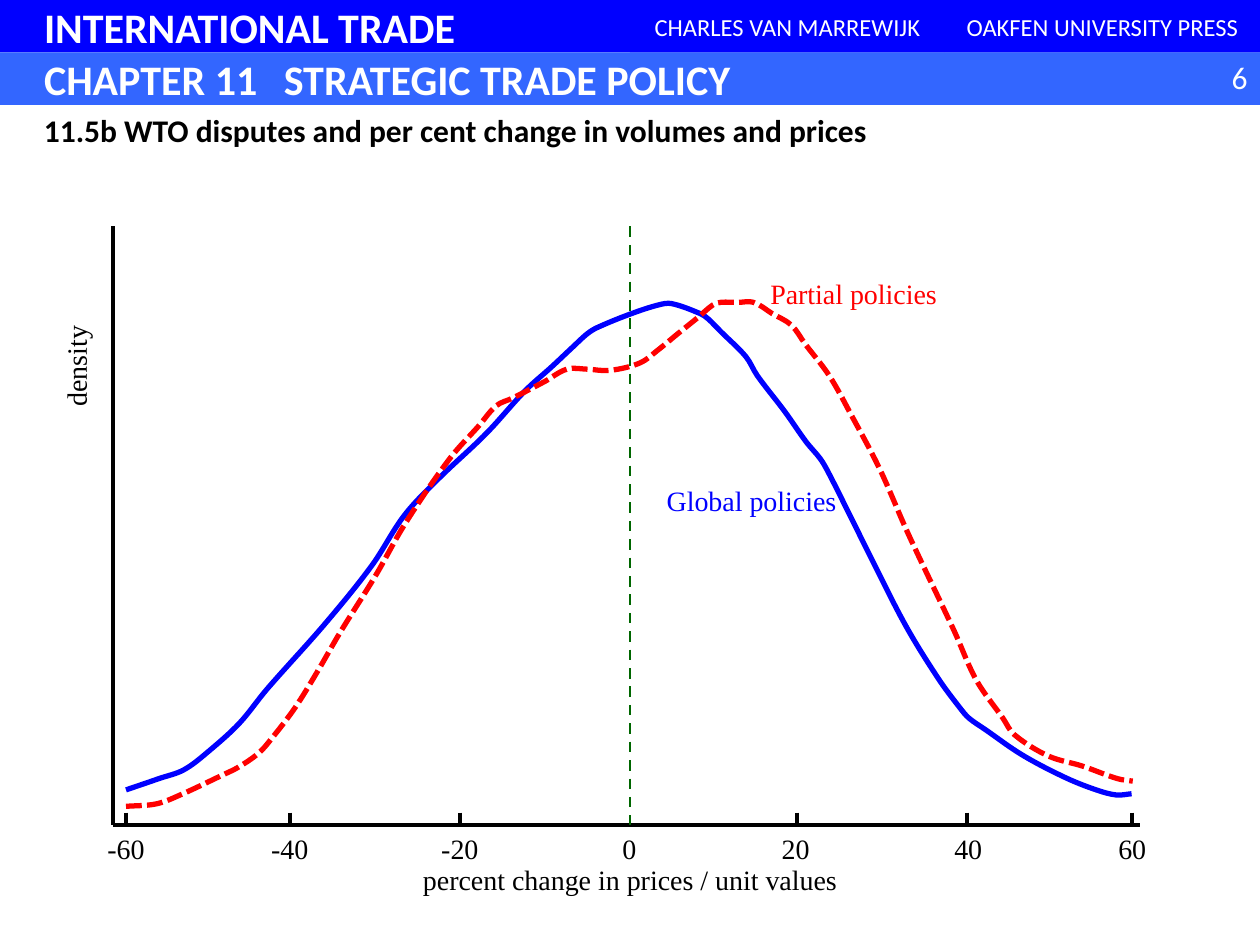
from math import dist

from lxml import etree
from pptx import Presentation
from pptx.dml.color import RGBColor
from pptx.enum import dml, shapes, text
from pptx.oxml import ns
from pptx.util import Pt

WHITE = RGBColor(0xFF, 0xFF, 0xFF)
BLACK = RGBColor(0, 0, 0)
BLUE = RGBColor(0, 0, 0xFF)
LIGHT_BLUE = RGBColor(0x33, 0x66, 0xFF)
RED = RGBColor(0xFF, 0, 0)
GREEN = RGBColor(0, 0x66, 0)
LEFT, CENTER, RIGHT = text.PP_ALIGN.LEFT, text.PP_ALIGN.CENTER, text.PP_ALIGN.RIGHT

presentation = Presentation()
presentation.slide_width, presentation.slide_height = Pt(720), Pt(540)
slide = presentation.slides.add_slide(presentation.slide_layouts[6])


def write(shape, words, size, color, font="Times New Roman", bold=False,
          align=CENTER, frame_format=None):
    frame = shape.text_frame
    for name, value in (frame_format or {"word_wrap": False}).items():
        setattr(frame, name, value)
    paragraph = frame.paragraphs[0]
    paragraph.alignment = align
    run = paragraph.add_run()
    run.text = words
    for name, value in {"size": Pt(size), "name": font, "bold": bold}.items():
        setattr(run.font, name, value)
    run.font.color.rgb = color
    return frame


def draw_line(x1, y1, x2, y2, color=BLACK, width=2.25, dash=None):
    line = slide.shapes.add_connector(
        shapes.MSO_CONNECTOR.STRAIGHT, Pt(x1), Pt(y1), Pt(x2), Pt(y2))
    line.line.color.rgb = color
    line.line.width = Pt(width)
    line.line.dash_style = dash
    etree.SubElement(line._element.spPr, ns.qn("a:effectLst"))


# Header bands
BAND = 30
for words, left, top, width, color, size, bold, align, margin in [
    ("INTERNATIONAL TRADE", 0, 0, 720, BLUE, 24, True, LEFT, 25.2),
    ("CHARLES VAN MARREWIJK", 360, 0, 180, BLUE, 14, False, CENTER, 7.2),
    ("OAKFEN UNIVERSITY PRESS", 540, 0, 180, BLUE, 14, False, CENTER, 7.2),
    ("CHAPTER 11\tSTRATEGIC TRADE POLICY", 0, BAND, 720, LIGHT_BLUE, 24, True, LEFT, 25.2),
]:
    band = slide.shapes.add_shape(
        shapes.MSO_SHAPE.RECTANGLE, Pt(left), Pt(top), Pt(width), Pt(BAND))
    band.shadow.inherit = False
    band.fill.solid()
    band.fill.fore_color.rgb = color
    band.line.fill.background()
    frame = write(band, words, size, WHITE, "Calibri", bold, align,
                  {"word_wrap": True, "vertical_anchor": text.MSO_ANCHOR.MIDDLE,
                   "margin_left": Pt(margin)})

# Tab stop between the chapter number and its title
tabs = etree.SubElement(frame.paragraphs[0]._p.get_or_add_pPr(), ns.qn("a:tabLst"))
etree.SubElement(tabs, ns.qn("a:tab"), pos=str(Pt(137)), algn="l")

# Slide number
number = slide.shapes.add_textbox(Pt(671.8), Pt(29.5), Pt(48.2), Pt(29))
write(number, "6", 18, WHITE, "Calibri", align=RIGHT, frame_format={"word_wrap": True})

# Axes and zero line
BASE, AXIS_TOP, AXIS_LEFT, ZERO = 471.6, 129.4, 64.8, 360
draw_line(AXIS_LEFT, BASE, 651.6, BASE)
draw_line(AXIS_LEFT, AXIS_TOP, AXIS_LEFT, BASE)
draw_line(ZERO, AXIS_TOP, ZERO, BASE, GREEN, 1.5, dml.MSO_LINE.DASH)

# Ticks and their labels
ticks = [(-60, 72, 72), (-40, 165.6, 165.6), (-20, 262.8, 262.8), (0, ZERO, 359.6),
         (20, 455.6, 454.7), (40, 552.4, 553.3), (60, 647, 647)]
for value, x, label_x in ticks:
    if value:
        draw_line(x, BASE - 7.2, x, BASE)
    label = slide.shapes.add_textbox(Pt(label_x - 18), Pt(BASE), Pt(36), Pt(26.6))
    write(label, str(value), 16, BLACK)

# Axis titles and curve names
for words, left, top, width, height, color in [
    ("percent change in prices / unit values", 232.6, 489.6, 254.9, 26.6, BLACK),
    ("density", 30.2, 182.2, 33.8, 54, BLACK),
    ("Global policies", 373, 272.9, 113, 26.6, BLUE),
    ("Partial policies", 432, 154.5, 111.6, 26.6, RED),
]:
    label = slide.shapes.add_textbox(Pt(left), Pt(top), Pt(width), Pt(height))
    frame = write(label, words, 16, color)
    if words == "density":
        frame._txBody.bodyPr.set("vert", "vert270")

# Density curves, smoothed through their knots
global_knots = [
    (72, 451.4), (90.7, 445), (105.1, 439.9), (119.5, 429.1), (136.8, 413.3),
    (152.6, 393.8), (185.8, 356.4), (212.4, 323.3), (231.1, 294.5), (250.6, 273.6),
    (277.9, 247.7), (300.2, 223.2), (315.4, 209.5), (326.9, 198.7), (335.5, 190.8),
    (341.3, 187.2), (360.7, 179.3), (376.6, 174.2), (383.8, 173.5), (400.3, 179.3),
    (404.6, 182.2), (411.8, 189.4), (426.2, 203.8), (432.7, 214.6), (448.6, 235.4),
    (460.8, 252.7), (468.7, 262.1), (473, 269.3), (484.6, 292.3), (498.2, 319.7),
    (517.7, 357.8), (536.4, 388.1), (548.6, 404.6), (553.7, 410.4), (563, 416.9),
    (583.9, 431.3), (608.4, 444.2), (626.4, 451.4), (637.9, 454.3), (646.6, 453.6)]
partial_knots = [
    (72, 460.8), (89.3, 459.4), (103, 454.3), (127.4, 442.8), (136.1, 438.5),
    (147.6, 430.6), (154.8, 422.6), (168.5, 404.6), (181.4, 383.8), (194.4, 361.4),
    (214.6, 329), (231.8, 298.8), (257, 262.1), (273.6, 243.4), (283.7, 231.8),
    (293, 227.5), (311, 218.2), (324, 211), (335.5, 211), (348.5, 211.7),
    (365.8, 207.4), (375.8, 200.2), (388.1, 190.1), (398.9, 181.4), (407.5, 174.2),
    (411.8, 172.8), (421.9, 172.8), (430.6, 172.8), (441.4, 179.3), (452.2, 185.8),
    (460.1, 196.6), (473.8, 214.6), (486.7, 237.6), (502.6, 267.8), (519.1, 305.3),
    (545, 360), (558, 388.8), (573.1, 410.4), (579.6, 419.8), (599, 432),
    (618.5, 437.8), (638.6, 445), (647.3, 446.4)]
for knots, color, dash in [(global_knots, BLUE, None),
                           (partial_knots, RED, dml.MSO_LINE.SQUARE_DOT)]:
    points = [(Pt(x), Pt(y)) for x, y in knots]
    builder = slide.shapes.build_freeform(*points[0])
    builder.add_line_segments(points[1:], close=False)
    curve = builder.convert_to_shape()
    curve.shadow.inherit = False
    curve.fill.background()
    curve.line.color.rgb = color
    curve.line.width = Pt(3)
    curve.line.dash_style = dash

    # Turn each segment into a Bézier whose handles follow the neighbouring knots
    padded = [points[0], *points, points[-1]]
    segments = list(curve._element.iter(ns.qn("a:lnTo")))
    for segment, a, b, c, d in zip(segments, padded, padded[1:], padded[2:], padded[3:]):
        reach = dist(b, c) / 3
        first = [q + (r - p) * reach / dist(a, c) for p, q, r in zip(a, b, c)]
        second = [q - (r - p) * reach / dist(b, d) for p, q, r in zip(b, c, d)]
        segment.tag = ns.qn("a:cubicBezTo")
        for index, (x, y) in enumerate([first, second]):
            handle = etree.Element(ns.qn("a:pt"), x=str(round(x - curve.left)),
                                   y=str(round(y - curve.top)))
            segment.insert(index, handle)

# Heading
heading = slide.shapes.add_textbox(Pt(18), Pt(60), Pt(564), Pt(29))
write(heading, "11.5b WTO disputes and per cent change in volumes and prices",
      18, BLACK, "Calibri", True, LEFT, {"word_wrap": True})

presentation.save("out.pptx")
